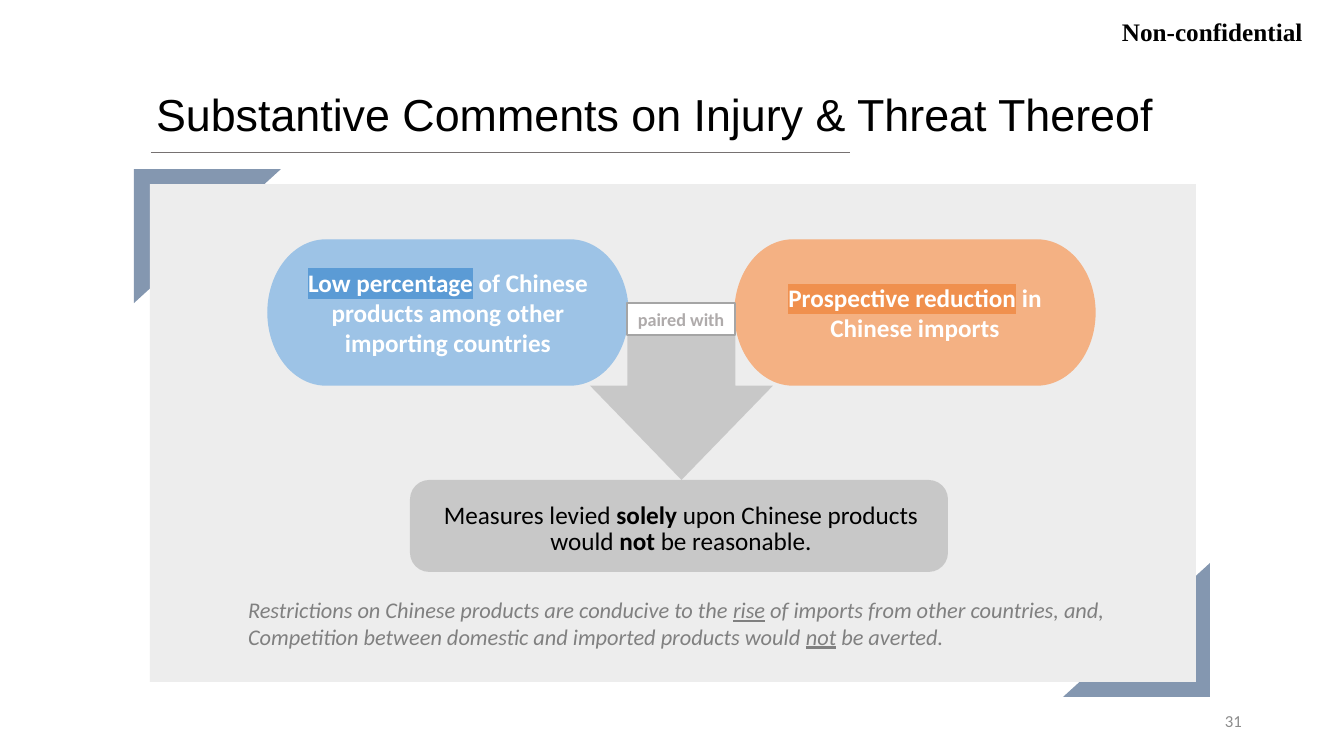
import pptx
import pptx.dml.color
import pptx.enum.shapes
import pptx.enum.text
import pptx.oxml
import pptx.oxml.ns
import pptx.util

SHAPE = pptx.enum.shapes.MSO_SHAPE
ALIGN = pptx.enum.text.PP_ALIGN
ANCHOR = pptx.enum.text.MSO_ANCHOR
QN = pptx.oxml.ns.qn
EMU_PER_PX = 914400 / 100.8

TITLE = "Substantive Comments on Injury & Threat Thereof"
TITLE_BOX = (146, 82, 1075, 64)
RULE = (151, 152, 850, 152)
FRAMES = [((134, 169, 147, 134), 0), ((1063, 563, 147, 134), 180)]
PANEL_BOX = (150, 184, 1046, 498)
CONCLUSION_BOX = (410, 480, 538, 92)
ARROW_BOX = (590, 335, 183, 145)
PAIRED_BOX = (627, 303, 108, 32)
BODY_BOX = (238, 478, 886, 204)
PREMISES = [
    ((735, 240, 360, 145), "F4B183", "F0904E",
     "Prospective reduction", " in Chinese imports"),
    ((268, 240, 360, 145), "9DC3E6", "5B9BD5",
     "Low percentage", " of Chinese products among other importing countries"),
]
CONCLUSION_STYLE = {"size": 18, "color": "000000"}
REMARK_STYLE = {"size": 16, "color": "808080", "italic": True}
BODY = [
    (ALIGN.CENTER, 33, 0, CONCLUSION_STYLE, "bold",
     ["Measures levied ", "solely ", "upon Chinese products"]),
    (ALIGN.CENTER, 19, 0, CONCLUSION_STYLE, "bold",
     ["would", " not ", "be reasonable."]),
    (ALIGN.LEFT, 29, 19, REMARK_STYLE, "underline",
     ["Restrictions on Chinese products are conducive to the ", "rise",
      " of imports from other countries, and,"]),
    (ALIGN.LEFT, 19, 0, REMARK_STYLE, "underline",
     ["Competition between domestic and imported products would ", "not",
      " be averted."]),
]
LABELS = [
    ((950, 701, 302, 40), "31", ALIGN.RIGHT, ANCHOR.MIDDLE,
     {"size": 12, "color": "8C8C8C"}),
    ((1112, 11, 218, 40), "Non-confidential", ALIGN.LEFT, ANCHOR.TOP,
     {"size": 18, "color": "000000", "name": "Times New Roman", "bold": True}),
]


def px(*lengths):
    """Turn lengths in px into EMU."""
    return [pptx.util.Emu(round(length * EMU_PER_PX)) for length in lengths]


def rgb(color):
    """Turn a hex string into a colour."""
    return pptx.dml.color.RGBColor.from_string(color)


def color_element(tag, color):
    """Make a DrawingML element that holds one colour."""
    element = pptx.oxml.parse_xml(
        f'<a:{tag} {pptx.oxml.ns.nsdecls("a")}><a:srgbClr val="{color}"/></a:{tag}>')
    return element


def add_run(paragraph, text, size, color, name="Calibri", bold=False,
            italic=False, underline=False, highlight=None):
    """Add one formatted run."""
    run = paragraph.add_run()
    run.text = text
    font = run.font
    font.size, font.name = pptx.util.Pt(size), name
    font.bold, font.italic, font.underline = bold, italic, underline
    font.color.rgb = rgb(color)
    if highlight:
        fill = run._r.rPr.find(QN("a:solidFill"))
        fill.addnext(color_element("highlight", highlight))


def add_shape(slide, kind, box, fill, line=None, adjustments=(), alpha=None):
    """Add a flat preset shape."""
    shape = slide.shapes.add_shape(kind, *px(*box))
    shape.shadow.inherit = False
    shape.fill.solid()
    shape.fill.fore_color.rgb = rgb(fill)
    if line:
        shape.line.color.rgb = rgb(line)
        shape.line.width = pptx.util.Pt(1)
    else:
        shape.line.fill.background()
    for index, value in enumerate(adjustments):
        shape.adjustments[index] = value
    if alpha:
        color = shape._element.spPr.find(QN("a:solidFill"))[0]
        color.append(pptx.oxml.parse_xml(
            f'<a:alpha {pptx.oxml.ns.nsdecls("a")} val="{alpha * 1000}"/>'))
    return shape


def set_frame(shape, anchor, wrap=True):
    """Set up a text frame and return it."""
    frame = shape.text_frame
    frame.word_wrap = wrap
    frame.auto_size = pptx.enum.text.MSO_AUTO_SIZE.NONE
    frame.vertical_anchor = anchor
    return frame


def place(shape, box):
    """Move and size a placeholder."""
    shape.left, shape.top, shape.width, shape.height = px(*box)


def add_title(slide):
    """Fill the title and draw the rule below it."""
    title = slide.shapes.title
    place(title, TITLE_BOX)
    paragraph = set_frame(title, ANCHOR.TOP).paragraphs[0]
    paragraph.alignment = ALIGN.LEFT
    add_run(paragraph, TITLE, 32, "000000", "Arial")
    rule = slide.shapes.add_connector(
        pptx.enum.shapes.MSO_CONNECTOR.STRAIGHT, *px(*RULE))
    rule.line.color.rgb = rgb("767171")
    rule.line.width = pptx.util.Pt(0.5)
    rule._element.spPr.append(pptx.oxml.parse_xml(
        f'<a:effectLst {pptx.oxml.ns.nsdecls("a")}/>'))


def add_diagram(slide):
    """Draw the panel, the two premises and the arrow to the conclusion."""
    for box, rotation in FRAMES:
        add_shape(slide, SHAPE.HALF_FRAME, box, "8497B0").rotation = rotation
    add_shape(slide, SHAPE.RECTANGLE, PANEL_BOX, "EDEDED")
    add_shape(slide, SHAPE.ROUNDED_RECTANGLE, CONCLUSION_BOX, "A5A5A5",
              adjustments=[0.21], alpha=50)
    for box, fill, highlight, key, rest in PREMISES:
        premise = add_shape(slide, SHAPE.FLOWCHART_TERMINATOR, box, fill, fill)
        paragraph = set_frame(premise, ANCHOR.MIDDLE).paragraphs[0]
        paragraph.alignment = ALIGN.CENTER
        add_run(paragraph, key, 18, "FFFFFF", bold=True, highlight=highlight)
        add_run(paragraph, rest, 18, "FFFFFF", bold=True)
    paired = add_shape(slide, SHAPE.RECTANGLE, PAIRED_BOX, "FFFFFF", "A5A5A5")
    frame = set_frame(paired, ANCHOR.MIDDLE, wrap=False)
    frame.paragraphs[0].alignment = ALIGN.CENTER
    add_run(frame.paragraphs[0], "paired with", 13, "AFABAB", bold=True)
    add_shape(slide, SHAPE.DOWN_ARROW, ARROW_BOX, "A5A5A5",
              adjustments=[0.59, 0.65], alpha=50)


def add_body(slide):
    """Write the conclusion and the remarks above the panel."""
    body = slide.placeholders[1]
    slide.shapes._spTree.append(body._element)
    place(body, BODY_BOX)
    frame = set_frame(body, ANCHOR.TOP)
    for index, (align, spacing, before, style, emphasis, texts) in enumerate(BODY):
        paragraph = frame.add_paragraph() if index else frame.paragraphs[0]
        paragraph.alignment = align
        paragraph.line_spacing = pptx.util.Pt(spacing)
        paragraph.space_before = pptx.util.Pt(before)
        properties = paragraph._p.get_or_add_pPr()
        properties.set("marL", "0")
        properties.set("indent", "0")
        properties.append(pptx.oxml.parse_xml(
            f'<a:buNone {pptx.oxml.ns.nsdecls("a")}/>'))
        for position, text in enumerate(texts):
            add_run(paragraph, text, **style, **{emphasis: position == 1})


def add_labels(slide):
    """Add the page number and the marking."""
    for box, text, align, anchor, style in LABELS:
        label = slide.shapes.add_textbox(*px(*box))
        paragraph = set_frame(label, anchor).paragraphs[0]
        paragraph.alignment = align
        add_run(paragraph, text, **style)


def main():
    """Build the slide and save it."""
    presentation = pptx.Presentation()
    presentation.slide_width, presentation.slide_height = px(1344, 756)
    slide = presentation.slides.add_slide(presentation.slide_layouts[1])
    add_title(slide)
    add_diagram(slide)
    add_body(slide)
    add_labels(slide)
    presentation.save("out.pptx")


if __name__ == "__main__":
    main()
